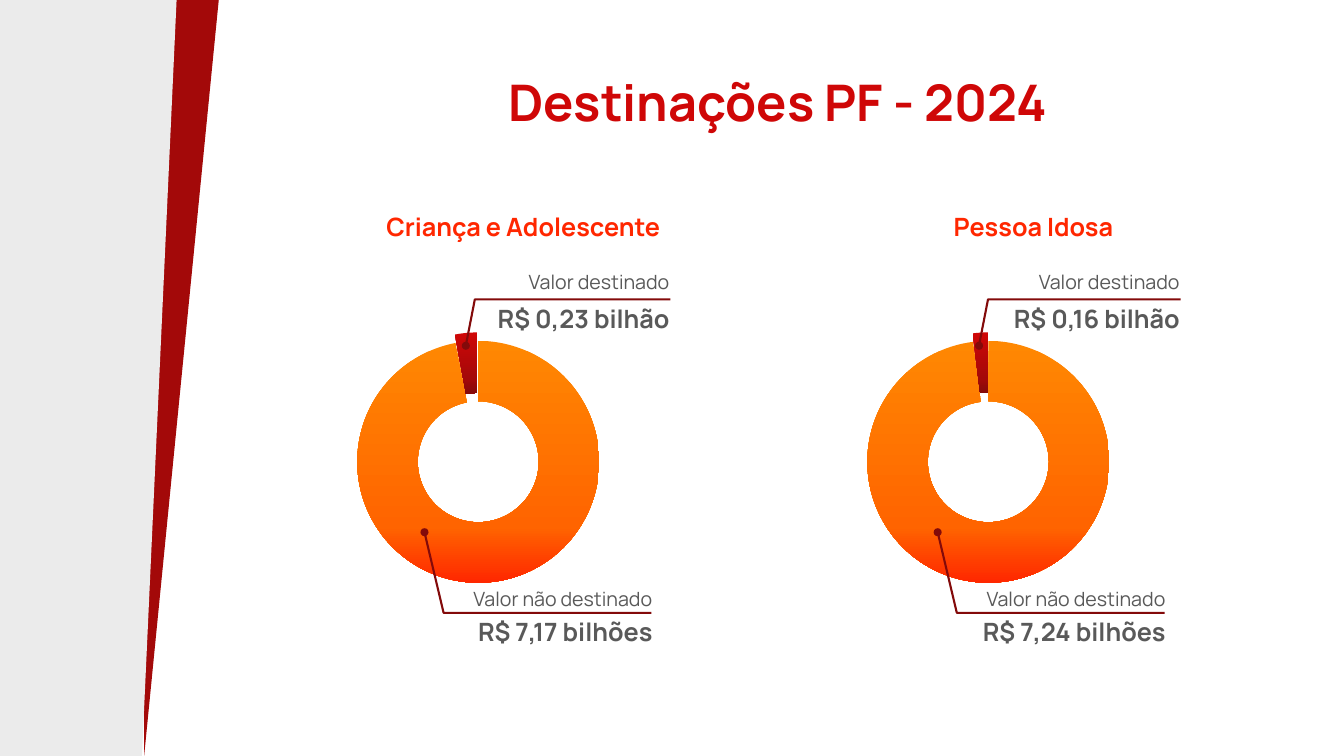
from copy import deepcopy

from lxml import etree
from pptx import Presentation
from pptx.chart.data import CategoryChartData
from pptx.dml.color import RGBColor
from pptx.enum.chart import XL_CHART_TYPE
from pptx.enum.shapes import MSO_SHAPE
from pptx.enum.text import PP_ALIGN
from pptx.oxml.ns import qn
from pptx.util import Inches, Pt

BLACK = RGBColor(0x00, 0x00, 0x00)
TITLE_RED = RGBColor(0xCF, 0x07, 0x07)
BAND_RED = RGBColor(0xA3, 0x09, 0x09)
DARK_RED = RGBColor(0x83, 0x0A, 0x0A)
SCARLET = RGBColor(0xFF, 0x27, 0x00)
AMBER = RGBColor(0xFF, 0x88, 0x02)
ORANGE = RGBColor(0xFF, 0x64, 0x00)
GRAY = RGBColor(0x59, 0x59, 0x59)
LIGHT_GRAY = RGBColor(0xEB, 0xEB, 0xEB)

GRADIENT_POSITIONS = (0, 0.77, 1)
SLICE_GRADIENTS = ((AMBER, ORANGE, SCARLET), (TITLE_RED, BAND_RED, DARK_RED))


class DonationSlide:
    font_name = "Manrope"
    chart_font_name = "Roboto"
    dot_size = 0.08

    def __init__(self, slide):
        self.slide = slide

    def add_text(self, text, left, top, width, height, size, color,
                 bold=True, alignment=PP_ALIGN.CENTER):
        box = self.slide.shapes.add_textbox(
            Inches(left), Inches(top), Inches(width), Inches(height))
        box.text_frame.word_wrap = True
        box.text_frame.text = text
        paragraph = box.text_frame.paragraphs[0]
        paragraph.alignment = alignment
        font = paragraph.runs[0].font
        font.name = self.font_name
        font.size = Pt(size)
        font.bold = bold
        font.color.rgb = color

    def add_filled_shape(self, kind, left, top, width, height, color, flip=False):
        shape = self.slide.shapes.add_shape(
            kind, Inches(left), Inches(top), Inches(width), Inches(height))
        shape.shadow.inherit = False
        shape.fill.solid()
        shape.fill.fore_color.rgb = color
        shape.line.fill.background()
        if flip:
            shape._element.spPr.find(qn("a:xfrm")).set("flipV", "1")
        return shape

    def add_side_band(self):
        self.add_filled_shape(
            MSO_SHAPE.RIGHT_TRIANGLE, 1.43, 0, 0.74, 7.5, BAND_RED, flip=True)
        panel = self.add_filled_shape(
            MSO_SHAPE.FLOWCHART_MANUAL_INPUT, -2.89, 2.89, 7.5, 1.72,
            LIGHT_GRAY, flip=True)
        panel.rotation = 270
        panel.line.color.rgb = LIGHT_GRAY
        panel.line.width = Pt(4.5)

    def add_leader(self, start, elbow, end):
        """Draw a bent line with a dot at its start."""
        first, *others = [
            (Inches(x), Inches(y)) for x, y in (start, elbow, end)]
        builder = self.slide.shapes.build_freeform(*first)
        builder.add_line_segments(others, close=False)
        leader = builder.convert_to_shape()
        leader.shadow.inherit = False
        leader.fill.background()
        leader.line.color.rgb = DARK_RED
        leader.line.width = Pt(1.5)
        radius = self.dot_size / 2
        self.add_filled_shape(
            MSO_SHAPE.OVAL, start[0] - radius, start[1] - radius,
            self.dot_size, self.dot_size, DARK_RED)

    def add_callout(self, label, amount, left, label_top, amount_top, width):
        self.add_text(label, left, label_top, width, 0.34, 14, GRAY,
                      bold=False, alignment=PP_ALIGN.RIGHT)
        self.add_text(amount, left, amount_top, width, 0.4, 18, GRAY,
                      alignment=PP_ALIGN.RIGHT)

    def add_doughnut(self, left, values):
        chart_data = CategoryChartData()
        chart_data.categories = ["1", "2"]
        chart_data.add_series("Series 1", values)
        chart = self.slide.shapes.add_chart(
            XL_CHART_TYPE.DOUGHNUT, Inches(left), Inches(3.16),
            Inches(2.76), Inches(2.76), chart_data).chart
        chart.has_legend = False
        chart.has_title = False
        chart.font.name = self.chart_font_name
        chart.font.size = Pt(10)
        chart.font.color.rgb = BLACK
        plot = chart.plots[0]
        plot.vary_by_categories = True
        plot.has_data_labels = False
        plot._element.find(qn("c:holeSize")).set("val", "24")

        series = plot.series[0]
        for index, colors in enumerate(SLICE_GRADIENTS):
            slice_format = series.points[index].format
            slice_format.line.fill.background()
            fill = slice_format.fill
            fill.gradient()
            fill.gradient_angle = 270
            stop_list = series._element.findall(".//" + qn("a:gsLst"))[index]
            stop_list.append(deepcopy(stop_list[-1]))
            for stop, position, color in zip(
                    fill.gradient_stops, GRADIENT_POSITIONS, colors):
                stop.position = position
                stop.color.rgb = color
        explosion = etree.Element(qn("c:explosion"), val="7")
        series._element.find(qn("c:dPt")).addprevious(explosion)

    def add_fund(self, heading, left, leader_left, values, donated, not_donated):
        """Add one heading with its doughnut and two callouts."""
        self.add_text(heading, left, 2.05, 3.66, 0.4, 18, SCARLET)
        self.add_doughnut(left, values)
        self.add_leader((leader_left + 0.45, 3.43), (leader_left + 0.54, 2.97),
                        (left + 3.29, 2.97))
        self.add_callout("Valor destinado", donated, left + 1.38, 2.63, 2.96, 2)
        self.add_leader((leader_left + 0.04, 5.28), (leader_left + 0.23, 6.08),
                        (leader_left + 2.29, 6.08))
        self.add_callout("Valor não destinado", not_donated,
                         leader_left + 0.12, 5.77, 6.07, 2.28)


def main():
    presentation = Presentation()
    presentation.slide_width = Inches(13.33)
    presentation.slide_height = Inches(7.5)
    page = DonationSlide(
        presentation.slides.add_slide(presentation.slide_layouts[6]))
    page.add_side_band()
    page.add_text("Destinações PF - 2024", 4.68, 0.66, 6.07, 0.71, 36, TITLE_RED)
    page.add_fund("Criança e Adolescente", 3.36, 4.17, (97, 3),
                  "R$ 0,23 bilhão", "R$ 7,17 bilhões")
    page.add_fund("Pessoa Idosa", 8.42, 9.26, (98, 2),
                  "R$ 0,16 bilhão", "R$ 7,24 bilhões")
    presentation.save("out.pptx")


if __name__ == "__main__":
    main()
